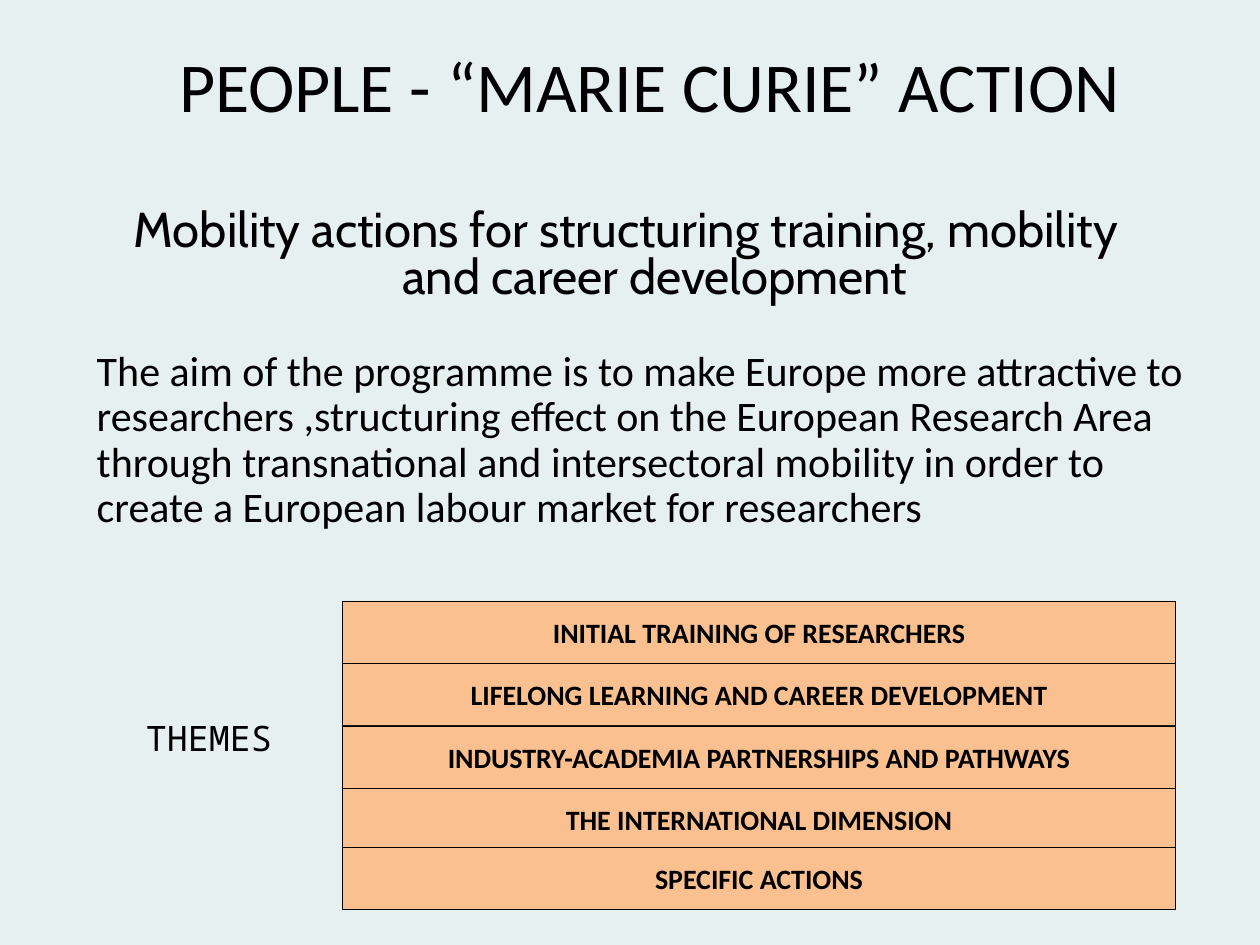
from pptx import Presentation
from pptx import util as u
from pptx.dml.color import RGBColor
from pptx.enum import shapes, text
from pptx.util import Pt

COLOURS = {"background": "E6F0F0", "bar": "FAC090", "ink": "000000"}

THEMES = [
    (343.4, "INITIAL TRAINING OF RESEARCHERS"),
    (379.1, "LIFELONG LEARNING AND CAREER DEVELOPMENT"),
    (414.8, "INDUSTRY-ACADEMIA PARTNERSHIPS AND PATHWAYS"),
    (450.5, "THE INTERNATIONAL DIMENSION"),
    (484, "SPECIFIC ACTIONS"),
]
MOBILITY = "Mobility actions for structuring training, mobility and career development"
AIM = (
    "The aim of the programme is to make Europe more attractive to researchers "
    ",structuring effect on the European Research Area through transnational and "
    "intersectoral mobility in order to create a European labour market for researchers"
)


def colour(name):
    return RGBColor.from_string(COLOURS[name])


def write(shape, words, size, face="Calibri", bold=False, wrap=True,
          anchor=text.MSO_ANCHOR.TOP, **paragraph_format):
    """Put one formatted paragraph in the shape and return the paragraph."""
    frame = shape.text_frame
    frame.auto_size = text.MSO_AUTO_SIZE.NONE
    frame.word_wrap = wrap
    frame.vertical_anchor = anchor
    paragraph = frame.paragraphs[0]
    for key, value in paragraph_format.items():
        setattr(paragraph, key, value)
    run = paragraph.add_run()
    run.text = words
    for key, value in {"size": Pt(size), "name": face, "bold": bold}.items():
        setattr(run.font, key, value)
    run.font.color.rgb = colour("ink")
    return paragraph


def add_title(slide, words):
    title = slide.shapes.title
    place = {"left": 76.3, "top": 20.9, "width": 589.7, "height": 55.4}
    for key, value in place.items():
        setattr(title, key, Pt(value))
    write(title, words, 40, alignment=text.PP_ALIGN.CENTER)


def add_text(slide, place, words, size, **style):
    box = slide.shapes.add_textbox(*map(Pt, place))
    return write(box, words, size, **style)


def add_theme_bars(slide):
    group = slide.shapes.add_group_shape()
    for top, theme in THEMES:
        bar = group.shapes.add_shape(
            shapes.MSO_SHAPE.RECTANGLE, Pt(195.8), Pt(top), Pt(476), Pt(35.5))
        bar.shadow.inherit = False
        bar.fill.solid()
        bar.fill.fore_color.rgb = colour("bar")
        bar.line.color.rgb = colour("ink")
        bar.line.width = Pt(0.25)
        write(bar, theme, 16, bold=True, wrap=False,
              anchor=text.MSO_ANCHOR.MIDDLE, alignment=text.PP_ALIGN.CENTER)


def hang(paragraph, indent):
    """Indent every line but the first."""
    properties = paragraph._p.get_or_add_pPr()
    properties.set("marL", str(u.Pt(indent)))
    properties.set("indent", str(-u.Pt(indent)))


def main():
    deck = Presentation()
    deck.slide_width, deck.slide_height = Pt(720), Pt(540)
    slide = deck.slides.add_slide(deck.slide_layouts[5])
    slide.background.fill.solid()
    slide.background.fill.fore_color.rgb = colour("background")

    add_theme_bars(slide)
    add_title(slide, "PEOPLE - “MARIE CURIE” ACTION")
    add_text(slide, (76.3, 406, 98.6, 31.7), "THEMES", 20,
             face="Noto Sans Mono", wrap=False)
    mobility = add_text(slide, (54, 116.6, 607, 61.2), MOBILITY, 28, face="Cabin",
                        alignment=text.PP_ALIGN.CENTER, line_spacing=0.8)
    hang(mobility, 33)
    add_text(slide, (48.2, 196.6, 654.5, 112.3), AIM, 24, line_spacing=0.9)
    deck.save("out.pptx")


if __name__ == "__main__":
    main()
